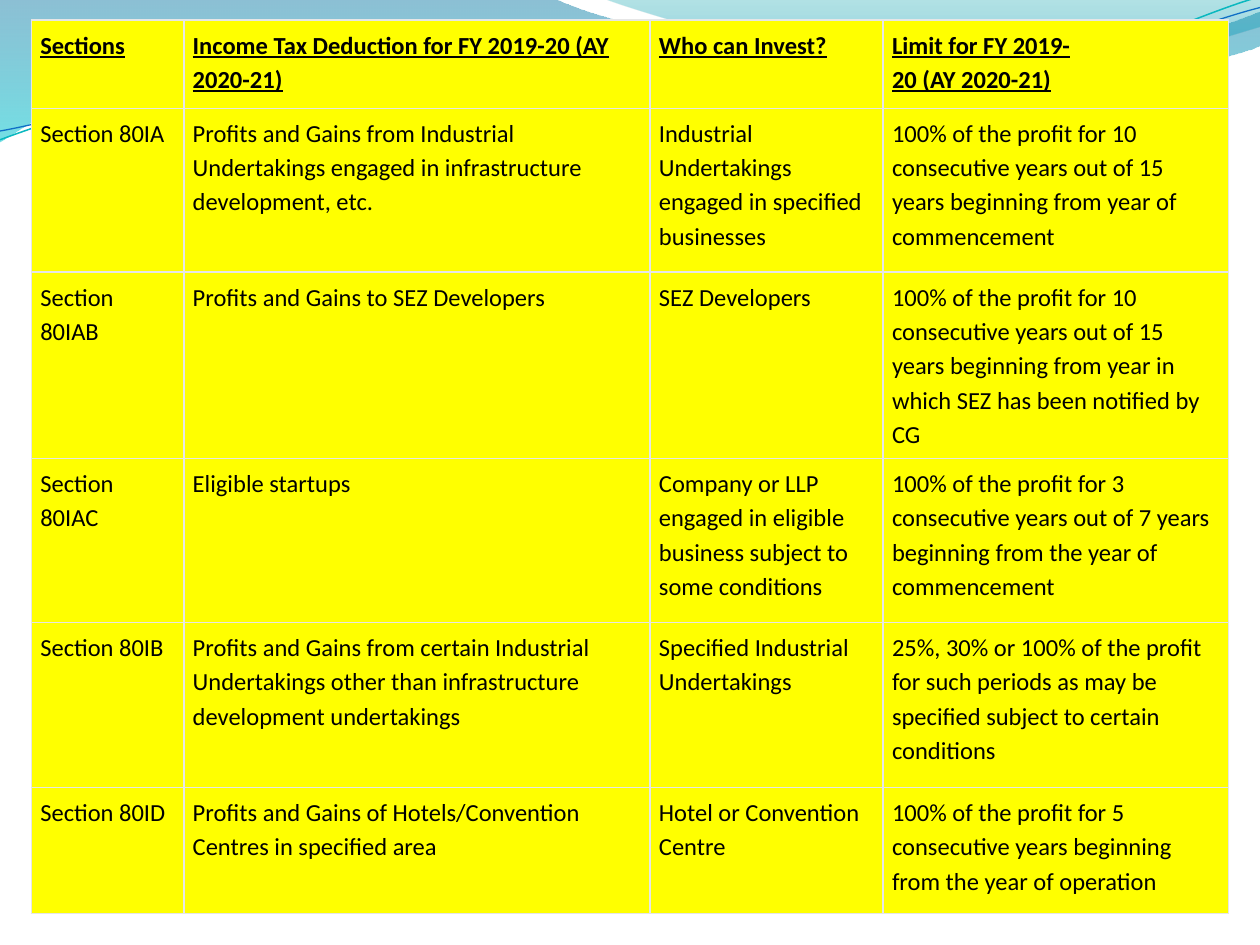
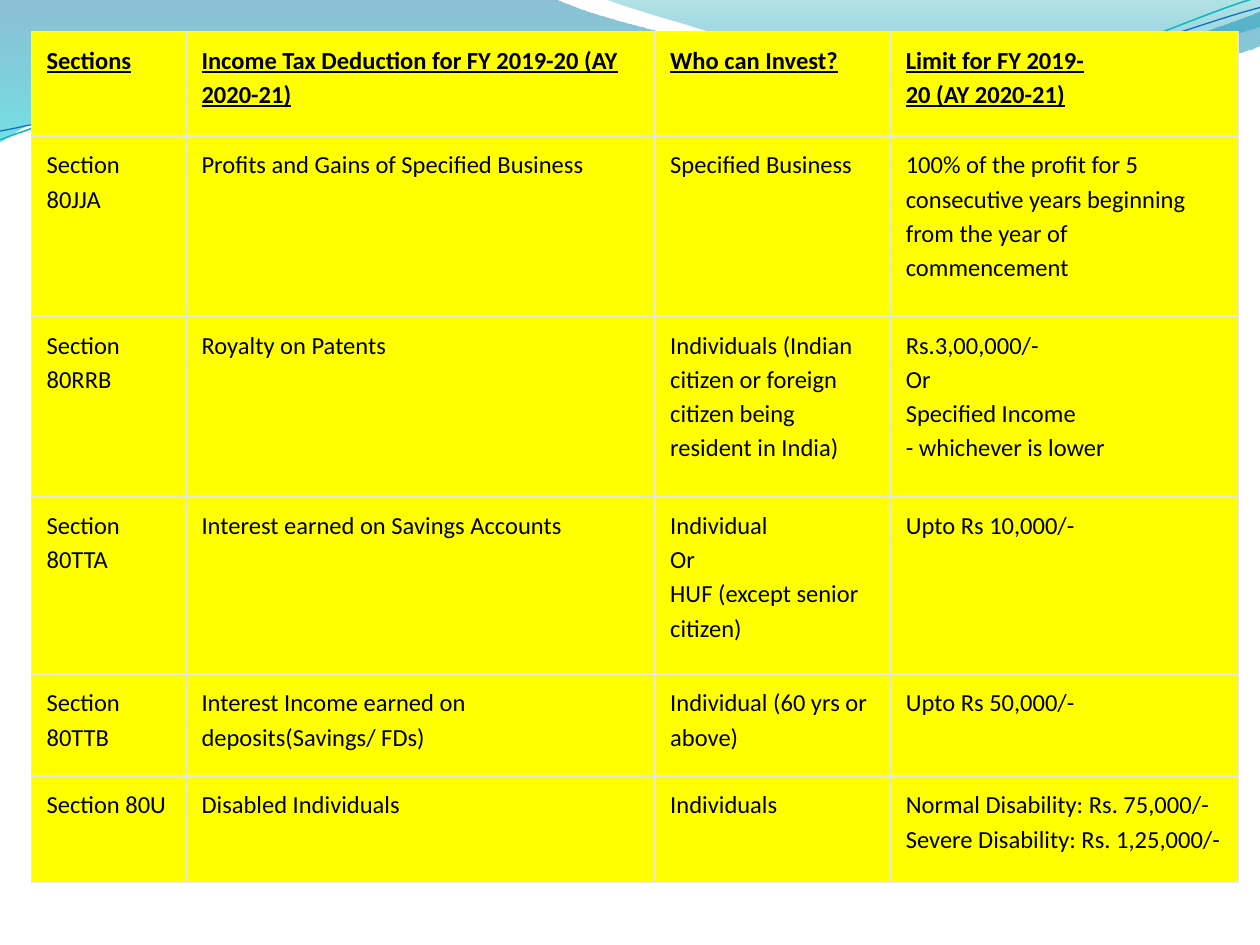
from dataclasses import dataclass

from lxml import etree
from pptx import Presentation
from pptx.dml.color import RGBColor
from pptx.oxml.ns import qn
from pptx.util import Inches, Pt


@dataclass(frozen=True)
class Theme:
    font: str = "Calibri"
    text_size: float = 14
    line_spacing: float = 1.15
    text: str = "000000"
    cell: str = "FFFF00"
    border: str = "E6E6E6"
    border_width: float = 1
    # Gradient stops: position, colour, opacity in percent
    wide_wave: tuple = ((0, "0074A1", 45), (1, "00C6CF", 55))
    right_wave: tuple = ((0, "00A1A9", 30), (0.8, "008BBF", 45))
    # Thin curves: colour, width
    teal_line: tuple = ("0AB8BF", 0.85)
    blue_line: tuple = ("0F6FC6", 0.75)


THEME = Theme()

# Each step holds one end point (straight) or two controls and an end point (curve).
WIDE_WAVE = [
    [(0, 0)], [(4.4, -0.01)],
    [(4.76, 0.17), (6.64, 0.63), (7.58, 0.63)],
    [(8.53, 0.63), (9.58, 0.26), (10, 0.09)],
    [(10.01, 0.36)],
    [(9.83, 0.44), (8.7, 0.76), (7.46, 0.75)],
    [(6.22, 0.75), (3.82, 0.28), (2.57, 0.34)],
    [(1.29, 0.36), (0.46, 0.83), (-0.01, 1.13)],
]
RIGHT_WAVE = [
    [(4.79, -0.01)],
    [(5.09, 0.11), (6.82, 0.62), (7.69, 0.65)],
    [(8.56, 0.69), (9.61, 0.32), (10, 0.21)],
    [(10, 0)],
]
TEAL_CURVE = [
    [(0, 1.11)],
    [(0.48, 0.93), (1.58, 0.57), (2.77, 0.52)],
    [(3.95, 0.47), (5.93, 0.89), (7.13, 0.8)],
    [(8.33, 0.71), (9.38, 0.15), (9.98, -0.02)],
]
BLUE_CURVE = [
    [(0, 1.04)],
    [(0.47, 0.96), (1.64, 0.61), (2.83, 0.56)],
    [(4.03, 0.51), (5.97, 0.84), (7.17, 0.75)],
    [(8.36, 0.67), (9.41, 0.21), (10, 0.06)],
]

HEADINGS = ("Sections", "Income Tax Deduction for FY 2019-20 (AY 2020-21)",
            "Who can Invest?", "Limit for FY 2019-\v20 (AY 2020-21)")

BUSINESS_DEDUCTIONS = [
    HEADINGS,
    ("Section 80IA",
     "Profits and Gains from Industrial Undertakings engaged in infrastructure development, etc.",
     "Industrial Undertakings engaged in specified businesses",
     "100% of the profit for 10 consecutive years out of 15 years beginning from year of "
     "commencement"),
    ("Section 80IAB", "Profits and Gains to SEZ Developers", "SEZ Developers",
     "100% of the profit for 10 consecutive years out of 15 years beginning from year in "
     "which SEZ has been notified by CG"),
    ("Section 80IAC", "Eligible startups",
     "Company or LLP engaged in eligible business subject to some conditions",
     "100% of the profit for 3 consecutive years out of 7 years beginning from the year of "
     "commencement"),
    ("Section 80IB",
     "Profits and Gains from certain Industrial Undertakings other than infrastructure "
     "development undertakings",
     "Specified Industrial Undertakings",
     "25%, 30% or 100% of the profit for such periods as may be specified subject to "
     "certain conditions"),
    ("Section 80ID", "Profits and Gains of Hotels/Convention Centres in specified area",
     "Hotel or Convention Centre",
     "100% of the profit for 5 consecutive years beginning from the year of operation"),
]
INDIVIDUAL_DEDUCTIONS = [
    HEADINGS,
    ("Section 80JJA", "Profits and Gains of Specified Business", "Specified Business",
     "100% of the profit for 5 consecutive years beginning from the year of commencement"),
    ("Section 80RRB", "Royalty on Patents",
     "Individuals (Indian citizen or foreign citizen being resident in India)",
     "Rs.3,00,000/-\vOr\vSpecified Income\v- whichever is lower"),
    ("Section 80TTA", "Interest earned on Savings Accounts",
     "Individual\vOr\vHUF (except senior citizen)", "Upto Rs 10,000/-"),
    ("Section 80TTB", "Interest Income earned on deposits(Savings/ FDs)",
     "Individual (60 yrs or above)", "Upto Rs 50,000/-"),
    ("Section 80U", "Disabled Individuals", "Individuals",
     "Normal Disability: Rs. 75,000/-\vSevere Disability: Rs. 1,25,000/-"),
]


def rgb(value):
    return RGBColor.from_string(value)


def add_outline(slide, steps, close):
    """Build a freeform through all points, then turn three-point steps into curves."""
    points = [(Inches(x), Inches(y)) for step in steps for x, y in step]
    builder = slide.shapes.build_freeform(*points[0])
    builder.add_line_segments(points[1:], close=close)
    shape = builder.convert_to_shape()
    shape.shadow.inherit = False
    segments = iter(list(shape.element.iter(qn("a:lnTo"))))
    for step in steps[1:]:
        parts = [next(segments) for _ in step]
        if len(parts) == 3:
            parts[0].tag = qn("a:cubicBezTo")
            for part in parts[1:]:
                parts[0].append(part[0])
                part.getparent().remove(part)
    return shape


def add_wave(slide, steps, stops):
    """Add a closed wave with a see-through gradient running downwards."""
    shape = add_outline(slide, steps, close=True)
    shape.line.fill.background()
    shape.fill.gradient()
    shape.fill.gradient_angle = 270
    for stop, (position, color, _) in zip(shape.fill.gradient_stops, stops):
        stop.position = position
        stop.color.rgb = rgb(color)
    colors = list(shape.element.spPr.iter(qn("a:srgbClr")))
    for color, (_, _, opacity) in zip(colors, stops):
        etree.SubElement(color, qn("a:alpha"), val=str(opacity * 1000))
    return shape


def add_curve(slide, steps, style):
    color, width = style
    shape = add_outline(slide, steps, close=False)
    shape.fill.background()
    shape.line.color.rgb = rgb(color)
    shape.line.width = Pt(width)
    return shape


def move_wave_band_to_layout(slide):
    """Draw the waves on a slide and hand them to its layout, which every slide shares."""
    band = [
        add_wave(slide, WIDE_WAVE, THEME.wide_wave),
        add_wave(slide, RIGHT_WAVE, THEME.right_wave),
        add_curve(slide, TEAL_CURVE, THEME.teal_line),
        add_curve(slide, BLUE_CURVE, THEME.blue_line),
    ]
    layout_tree = slide.slide_layout.shapes.element
    for shape in band:
        layout_tree.append(shape.element)


def set_borders(cell):
    properties = cell._tc.get_or_add_tcPr()
    for index, side in enumerate(("lnL", "lnR", "lnT", "lnB")):
        line = etree.Element(qn(f"a:{side}"), w=str(Pt(THEME.border_width)))
        fill = etree.SubElement(line, qn("a:solidFill"))
        etree.SubElement(fill, qn("a:srgbClr"), val=THEME.border)
        properties.insert(index, line)


def fill_cell(cell, text, insets, heading):
    cell.fill.solid()
    cell.fill.fore_color.rgb = rgb(THEME.cell)
    set_borders(cell)
    cell.margin_left = cell.margin_right = Inches(insets[0])
    cell.margin_top = cell.margin_bottom = Inches(insets[1])
    paragraph = cell.text_frame.paragraphs[0]
    paragraph.text = text
    paragraph.line_spacing = THEME.line_spacing
    for run in paragraph.runs:
        run.font.name = THEME.font
        run.font.size = Pt(THEME.text_size)
        run.font.color.rgb = rgb(THEME.text)
        run.font.bold = run.font.underline = heading


def add_deduction_table(slide, left, top, widths, heights, insets, rows):
    frame = slide.shapes.add_table(len(rows), len(widths), Inches(left), Inches(top),
                                   Inches(sum(widths)), Inches(sum(heights)))
    table = frame.table
    table.first_row = table.horz_banding = False
    for column, width in zip(table.columns, widths):
        column.width = Inches(width)
    for row_index, (row, height, texts) in enumerate(zip(table.rows, heights, rows)):
        row.height = Inches(height)
        for cell, text in zip(row.cells, texts):
            fill_cell(cell, text, insets, heading=row_index == 0)


def main():
    presentation = Presentation()
    presentation.slide_width = Inches(10)
    presentation.slide_height = Inches(7.5)
    layout = presentation.slide_layouts[6]
    for placeholder in list(layout.placeholders):
        layout.shapes.element.remove(placeholder.element)

    business_slide = presentation.slides.add_slide(layout)
    move_wave_band_to_layout(business_slide)
    add_deduction_table(business_slide, left=0.25, top=0.16, insets=(0.07, 0.05),
                        widths=(1.21, 3.7, 1.85, 2.74),
                        heights=(0.7, 1.3, 1.48, 1.3, 1.31, 1),
                        rows=BUSINESS_DEDUCTIONS)

    individual_slide = presentation.slides.add_slide(layout)
    add_deduction_table(individual_slide, left=0.25, top=0.25, insets=(0.12, 0.08),
                        widths=(1.23, 3.72, 1.87, 2.76),
                        heights=(0.83, 1.43, 1.43, 1.41, 0.81, 0.84),
                        rows=INDIVIDUAL_DEDUCTIONS)
    presentation.save("out.pptx")


if __name__ == "__main__":
    main()
